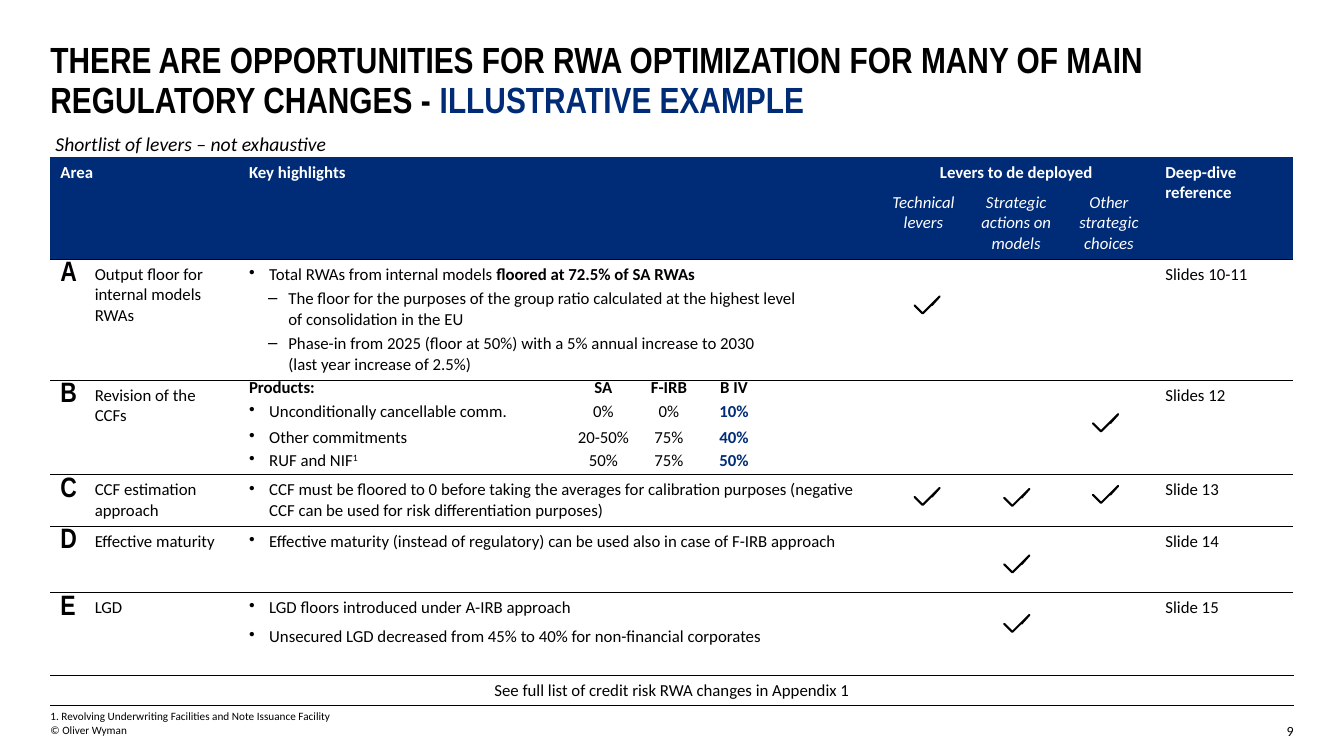
from copy import deepcopy
from lxml.etree import SubElement
from pptx import Presentation
from pptx.dml.color import RGBColor
from pptx.enum.text import MSO_ANCHOR, PP_ALIGN
from pptx.oxml import parse_xml
from pptx.oxml.ns import nsdecls, qn
from pptx.util import Inches, Pt

BLACK, NAVY, WHITE = "000000", "002C77", "FFFFFF"
CENTER, RIGHT = PP_ALIGN.CENTER, PP_ALIGN.RIGHT
NO_STYLE = "{2D5ABB26-0587-4C30-8999-92F81FD0307C}"


def write(frame, text, size=12, font="Calibri", color=BLACK, bold=False, italic=False,
          align=None, before=0, spacing=None, bullet=None, indent=0.2):
    """Add a paragraph; text is a string or a list of (text, run overrides)."""
    first = frame.paragraphs[0]
    paragraph = frame.add_paragraph() if first.runs else first
    paragraph.alignment = align
    if before:
        paragraph.space_before = Pt(before)
    if spacing:
        paragraph.line_spacing = spacing
    if bullet:
        properties = paragraph._p.get_or_add_pPr()
        properties.set("marL", str(Inches(indent)))
        properties.set("indent", str(Inches(-0.2)))
        SubElement(properties, qn("a:buChar")).set("char", bullet)
    for words, changes in [(text, {})] if isinstance(text, str) else text:
        for number, line in enumerate(words.split("\n")):
            if number:
                paragraph.add_line_break()
                paragraph._p[-1].append(deepcopy(run._r.rPr))
            run = paragraph.add_run()
            run.text = line
            run.font.size, run.font.name = Pt(size), font
            run.font.bold, run.font.italic = changes.get("bold", bold), italic
            run.font.color.rgb = RGBColor.from_string(changes.get("color", color))
            if "baseline" in changes:
                run._r.rPr.set("baseline", changes["baseline"])


def add_grid(left, top, widths, heights, margins=(0.1, 0.05), anchor=MSO_ANCHOR.TOP):
    """Add an unstyled table with the given column widths and row heights."""
    table = slide.shapes.add_table(
        len(heights), len(widths), Inches(left), Inches(top),
        Inches(sum(widths)), Inches(sum(heights))).table
    table.first_row = table.horz_banding = False
    table._tbl.tblPr[0].text = NO_STYLE
    for column, width in zip(table.columns, widths):
        column.width = Inches(width)
    for row, height in zip(table.rows, heights):
        row.height = Inches(height)
    for cell in table.iter_cells():
        cell.margin_left = cell.margin_right = Inches(margins[0])
        cell.margin_top = cell.margin_bottom = Inches(margins[1])
        cell.vertical_anchor = anchor
        cell.fill.background()
    return table


presentation = Presentation()
presentation.slide_width, presentation.slide_height = Inches(13.33), Inches(7.5)
slide = presentation.slides.add_slide(presentation.slide_layouts[6])

# Title, subtitle, footnote, copyright and page number
title = [("THERE ARE OPPORTUNITIES FOR RWA OPTIMIZATION FOR MANY OF MAIN REGULATORY CHANGES - ", {}),
         ("ILLUSTRATIVE EXAMPLE", {"color": NAVY})]
text_boxes = [
    (0.5, 0.42, 12.33, 0.83, title,
     dict(size=26, font="Arial Narrow", bold=True, spacing=0.9)),
    (0.55, 1.31, 5.21, 0.24, "Shortlist of levers – not exhaustive", dict(size=14, italic=True)),
    (0.5, 7.04, 12.33, 0.13, "1. Revolving Underwriting Facilities and Note Issuance Facility",
     dict(size=8)),
    (0.5, 7.18, 2, 0.13, "© Oliver Wyman", dict(size=8)),
    (12.33, 7.17, 0.5, 0.17, "9", dict(size=10, align=RIGHT)),
]
for left, top, width, height, text, style in text_boxes:
    frame = slide.shapes.add_textbox(
        Inches(left), Inches(top), Inches(width), Inches(height)).text_frame
    frame.word_wrap = True
    frame.margin_left = frame.margin_right = frame.margin_top = frame.margin_bottom = 0
    write(frame, text, **style)

# Main table of levers
levers = add_grid(0.5, 1.56, [0.34, 1.53, 6.33, 0.92, 0.92, 0.92, 1.37],
                  [0.3, 0.71, 1.2, 0.94, 0.51, 0.66, 0.59])
for column in range(7):
    for row in range(2):
        fill = levers.cell(row, column).fill
        fill.solid()
        fill.fore_color.rgb = RGBColor.from_string(NAVY)
for start, end in [((0, 0), (1, 1)), ((0, 2), (1, 2)), ((0, 3), (0, 5)), ((0, 6), (1, 6))]:
    levers.cell(*start).merge(levers.cell(*end))
for column, text, align in [(0, "Area", None), (2, "Key highlights", None),
                            (3, "Levers to de deployed", CENTER),
                            (6, "Deep-dive reference", None)]:
    write(levers.cell(0, column).text_frame, text, color=WHITE, bold=True, align=align)
for column, text in enumerate(
        ["Technical levers", "Strategic actions on models", "Other strategic choices"], 3):
    write(levers.cell(1, column).text_frame, text, color=WHITE, italic=True, align=CENTER)

dot = dict(bullet="•")
dash = dict(bullet="–", indent=0.39, before=3)
areas = [
    ("A", "Output floor for internal models RWAs", "Slides 10-11", [
        ([("Total RWAs from internal models ", {}),
          ("floored at 72.5% of SA RWAs", {"bold": True})], dot),
        ("The floor for the purposes of the group ratio calculated at the highest level \n"
         "of consolidation in the EU", dash),
        ("Phase-in from 2025 (floor at 50%) with a 5% annual increase to 2030 \n"
         "(last year increase of 2.5%)", dash)]),
    ("B", "Revision of the CCFs", "Slides 12", []),
    ("C", "CCF estimation approach", "Slide 13", [
        ("CCF must be floored to 0 before taking the averages for calibration purposes "
         "(negative CCF can be used for risk differentiation purposes)", dot)]),
    ("D", "Effective maturity", "Slide 14", [
        ("Effective maturity (instead of regulatory) can be used also in case of F-IRB approach",
         dot)]),
    ("E", "LGD", "Slide 15", [
        ("LGD floors introduced under A-IRB approach", dot),
        ("Unsecured LGD decreased from 45% to 40% for non-financial corporates",
         dict(dot, before=6))]),
]
for row, (letter, area, reference, highlights) in enumerate(areas, 2):
    levers.cell(row, 0).margin_top = Inches(0.02)
    write(levers.cell(row, 0).text_frame, letter, size=20, font="Arial Narrow", bold=True)
    write(levers.cell(row, 1).text_frame, area)
    for text, style in highlights:
        write(levers.cell(row, 2).text_frame, text, **style)
    write(levers.cell(row, 6).text_frame, reference)

# Product table inside row B
products = add_grid(2.43, 3.75, [3.2, 0.71, 0.59, 0.7], [0.2, 0.26, 0.26, 0.2],
                    margins=(0.04, 0), anchor=MSO_ANCHOR.MIDDLE)
product_rows = [
    ("Products:", "SA", "F-IRB", "B IV"),
    ("Unconditionally cancellable comm.", "0%", "0%", "10%"),
    ("Other commitments", "20-50%", "75%", "40%"),
    ([("RUF and NIF", {}), ("1", {"baseline": "30000"})], "50%", "75%", "50%"),
]
for row, values in enumerate(product_rows):
    for column, text in enumerate(values):
        write(products.cell(row, column).text_frame, text,
              bold=row == 0 or column == 3,
              color=NAVY if row and column == 3 else BLACK,
              align=CENTER if column else None,
              bullet="•" if row and column == 0 else None)

# Closing row
closing = add_grid(0.5, 6.7, [12.33], [0.3], anchor=MSO_ANCHOR.BOTTOM)
write(closing.cell(0, 0).text_frame, "See full list of credit risk RWA changes in Appendix 1",
      align=CENTER)

# Horizontal rules
ruled_cells = [(levers.cell(row, column), "lnT") for row in range(2, 7) for column in range(7)]
ruled_cells += [(closing.cell(0, 0), "lnB"), (closing.cell(0, 0), "lnT")]
for cell, edge in ruled_cells:
    cell._tc.get_or_add_tcPr().insert(0, parse_xml(
        f'<a:{edge} {nsdecls("a")} w="{Pt(0.75)}"><a:solidFill>'
        f'<a:srgbClr val="{BLACK}"/></a:solidFill></a:{edge}>'))

# Check marks
technical, strategic, other = 9.07, 9.96, 10.84
tick = [(0, 0.09), (0.08, 0.17), (0.25, 0), (0.17, 0.09)]
for left, top in [(technical, 2.94), (other, 4.11), (technical, 4.84), (strategic, 4.85),
                  (other, 4.82), (strategic, 5.51), (strategic, 6.1)]:
    builder = slide.shapes.build_freeform(Inches(left + 0.04), Inches(top + 0.13))
    builder.add_line_segments(
        [(Inches(left + x), Inches(top + y)) for x, y in tick], close=False)
    check_mark = builder.convert_to_shape()
    check_mark.shadow.inherit = False
    check_mark.fill.background()
    check_mark.line.color.rgb = RGBColor.from_string(BLACK)
    check_mark.line.width = Pt(1.5)

presentation.save("out.pptx")
